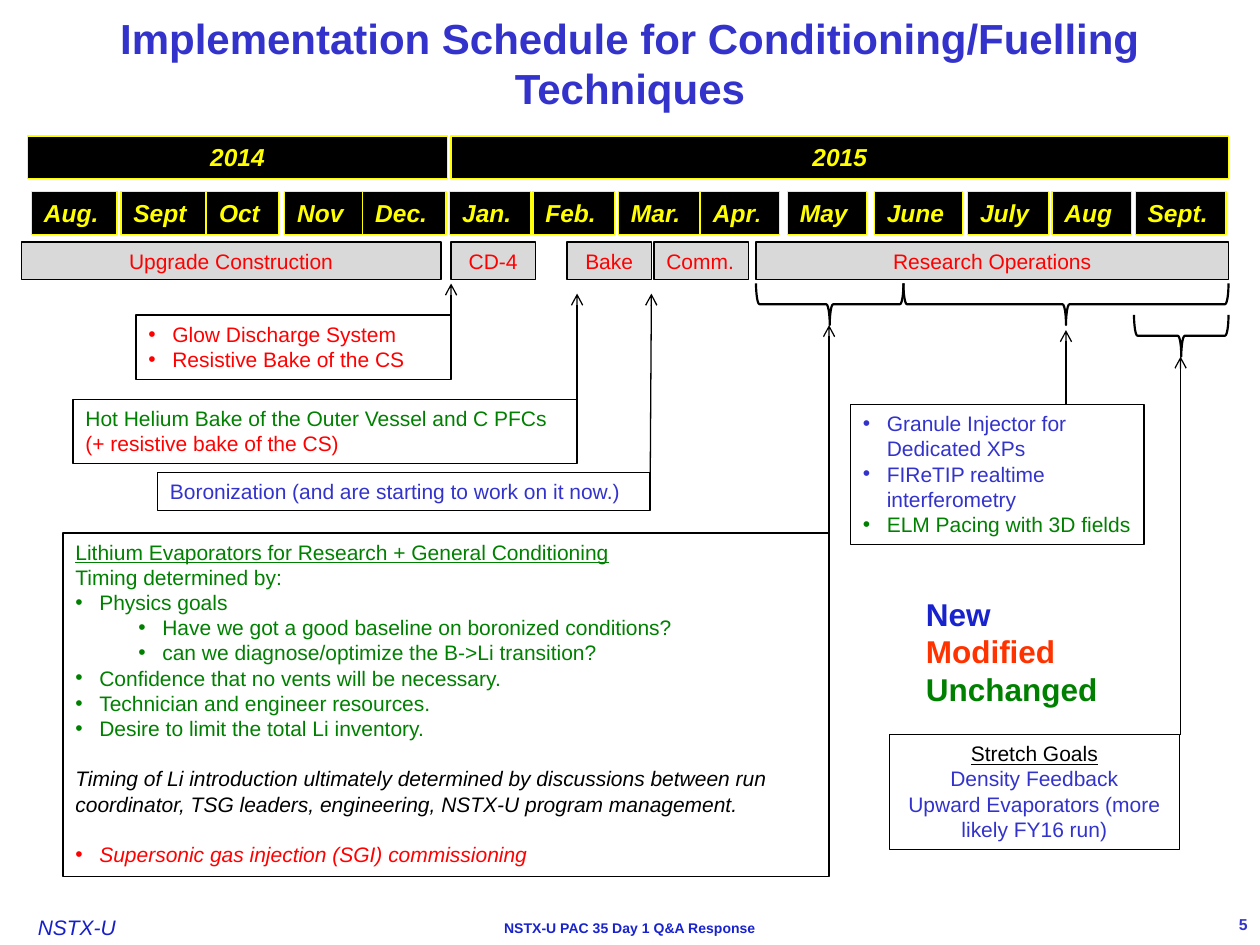
from dataclasses import dataclass, field
from typing import Optional

from lxml.etree import SubElement
from pptx import Presentation
from pptx.dml.color import RGBColor
from pptx.enum.shapes import MSO_CONNECTOR as CONN, MSO_SHAPE as SHAPE
from pptx.enum.text import MSO_ANCHOR as ANCHOR, MSO_AUTO_SIZE as AUTO, PP_ALIGN as ALIGN
from pptx.oxml.ns import qn
from pptx.util import Inches, Pt

BLACK = RGBColor(0x00, 0x00, 0x00)
YELLOW = RGBColor(0xFF, 0xFF, 0x00)
GRAY = RGBColor(0xD9, 0xD9, 0xD9)
RED = RGBColor(0xFF, 0x00, 0x00)
ORANGE = RGBColor(0xFF, 0x33, 0x00)
GREEN = RGBColor(0x00, 0x80, 0x00)
INDIGO = RGBColor(0x33, 0x33, 0xCC)
BLUE = RGBColor(0x18, 0x22, 0xCD)
NAVY = RGBColor(0x17, 0x1F, 0xC7)

BODY = {"size": Pt(12)}
DATE = {"size": Pt(14), "bold": True, "italic": True}
LEGEND = {"size": Pt(18), "bold": True}
UNDER = {"underline": True}
ITALIC = {"italic": True}
BULLET_INDENTS = (0.19, 0.69)


@dataclass
class Run:
    text: str
    color: RGBColor
    fmt: dict = field(default_factory=dict)


@dataclass
class Para:
    runs: list[Run]
    level: Optional[int] = None
    align: ALIGN = ALIGN.LEFT
    gap: float = 0


@dataclass
class Box:
    x: float
    y: float
    w: float
    h: float
    paras: list[Para]
    fill: Optional[RGBColor] = None
    line: Optional[RGBColor] = BLACK
    base: dict = field(default_factory=lambda: BODY)
    wrap: bool = True
    anchor: ANCHOR = ANCHOR.TOP
    grow: bool = True
    margins: Optional[float] = None


@dataclass
class Arrow:
    x: float
    y: float
    end_x: float
    end_y: float
    source: Optional[str] = None


def text(value: str, color: RGBColor, align: ALIGN = ALIGN.LEFT, **fmt) -> Para:
    return Para([Run(value, color, fmt)], align=align)


def bullet(value: str, color: RGBColor, level: int = 0, gap: float = 0, **fmt) -> Para:
    return Para([Run(value, color, fmt)], level=level, gap=gap)


def fill_paragraph(p, para: Para, base: dict) -> None:
    p.alignment = para.align
    if para.gap:
        p.space_before = Pt(para.gap)
    if para.level is not None:
        p.level = para.level
        pPr = p._p.get_or_add_pPr()
        pPr.set("marL", str(Inches(BULLET_INDENTS[para.level])))
        pPr.set("indent", str(-Inches(BULLET_INDENTS[0])))
        SubElement(pPr, qn("a:buFont"), typeface="Arial")
        SubElement(pPr, qn("a:buChar"), char="•")
    for run in para.runs:
        r = p.add_run()
        r.text = run.text
        r.font.color.rgb = run.color
        for name, value in {"name": "Arial", **base, **run.fmt}.items():
            setattr(r.font, name, value)


def draw_box(s, box: Box):
    frame = [Inches(v) for v in (box.x, box.y, box.w, box.h)]
    if box.line is None:
        sp = s.shapes.add_textbox(*frame)
    else:
        sp = s.shapes.add_shape(SHAPE.RECTANGLE, *frame)
        sp.shadow.inherit = False
        sp.line.color.rgb = box.line
        sp.line.width = Pt(0.75)
        if box.fill is None:
            sp.fill.background()
        else:
            sp.fill.solid()
            sp.fill.fore_color.rgb = box.fill
    tf = sp.text_frame
    tf.word_wrap = box.wrap
    tf.vertical_anchor = box.anchor
    tf.auto_size = AUTO.SHAPE_TO_FIT_TEXT if box.grow else AUTO.NONE
    if box.margins is not None:
        for side in ("left", "top", "right", "bottom"):
            setattr(tf, f"margin_{side}", Inches(box.margins))
    for i, para in enumerate(box.paras):
        fill_paragraph(tf.add_paragraph() if i else tf.paragraphs[0], para, box.base)
    return sp


def draw_brace(s, left: float, top: float, span: float, depth: float = 0.33) -> None:
    x, y = left + (span - depth) / 2, top - (span - depth) / 2
    sp = s.shapes.add_shape(SHAPE.RIGHT_BRACE, Inches(x), Inches(y), Inches(depth), Inches(span))
    sp.rotation = 90
    sp.shadow.inherit = False
    sp.fill.background()
    sp.line.color.rgb = BLACK
    sp.line.width = Pt(1.25)


def draw_arrow(s, arrow: Arrow, boxes: dict) -> None:
    ends = [Inches(v) for v in (arrow.x, arrow.y, arrow.end_x, arrow.end_y)]
    c = s.shapes.add_connector(CONN.STRAIGHT, *ends)
    if arrow.source:
        c.begin_connect(boxes[arrow.source], 3)
    c.line.color.rgb = BLACK
    c.line.width = Pt(0.75)
    SubElement(c.line._get_or_add_ln(), qn("a:tailEnd"), type="arrow")
    SubElement(c._element.spPr, qn("a:effectLst"))


MONTHS = [("Aug.", 0.25, 0.68), ("Sept", 0.96, 0.67), ("Oct", 1.64, 0.57), ("Nov", 2.26, 0.62),
          ("Dec.", 2.88, 0.66), ("Jan.", 3.57, 0.64), ("Feb.", 4.23, 0.65), ("Mar.", 4.91, 0.64),
          ("Apr", 5.56, 0.63), ("May", 6.25, 0.63), ("June", 6.94, 0.7), ("July", 7.68, 0.64),
          ("Aug", 8.35, 0.63), ("Sept.", 9.01, 0.72)]
YEARS = [("2014", 0.22, 3.33), ("2015", 3.58, 6.17)]
PHASES = [("Upgrade Construction", 0.17, 3.33, ALIGN.CENTER), ("CD-4", 3.58, 0.67, ALIGN.CENTER),
          ("Bake", 4.5, 0.67, ALIGN.CENTER), ("Comm.", 5.19, 0.75, ALIGN.LEFT),
          ("Research Operations", 6, 3.75, ALIGN.CENTER)]
NOTES = {
    "glow": Box(1.08, 2.5, 2.5, 0.51, [
        bullet("Glow Discharge System", RED), bullet("Resistive Bake of the CS", RED)]),
    "helium": Box(0.58, 3.17, 4, 0.51, [Para([
        Run("Hot Helium Bake of the Outer Vessel and C PFCs ", GREEN),
        Run("(+ resistive bake of the CS)", RED)])]),
    "boron": Box(1.25, 3.75, 3.91, 0.3, [
        text("Boronization (and are starting to work on it now.)", INDIGO)]),
    "lithium": Box(0.5, 4.23, 6.08, 2.73, [
        text("Lithium Evaporators for Research + General Conditioning", GREEN, **UNDER),
        text("Timing determined by:", GREEN),
        bullet("Physics goals", GREEN),
        bullet("Have we got a good baseline on boronized conditions?", GREEN, 1),
        bullet("can we diagnose/optimize the B->Li transition?", GREEN, 1),
        bullet("Confidence that no vents will be necessary.", GREEN),
        bullet("Technician and engineer resources.", GREEN),
        bullet("Desire to limit the total Li inventory.", GREEN),
        Para([Run("Timing of Li introduction ultimately determined by discussions between run "
                  "coordinator, TSG leaders, engineering, NSTX-U program management.",
                  BLACK, ITALIC)], gap=14.4),
        bullet("Supersonic gas injection (SGI) commissioning", RED, gap=14.4, **ITALIC)]),
    "granule": Box(6.75, 3.21, 2.33, 1.11, [
        bullet("Granule Injector for Dedicated XPs", INDIGO),
        bullet("FIReTIP realtime interferometry", INDIGO),
        bullet("ELM Pacing with 3D fields", GREEN)]),
    "stretch": Box(7.06, 5.83, 2.3, 0.91, [
        text("Stretch Goals", BLACK, ALIGN.CENTER, **UNDER),
        text("Density Feedback", INDIGO, ALIGN.CENTER),
        text("Upward Evaporators (more likely FY16 run)", INDIGO, ALIGN.CENTER)]),
    "legend": Box(7.25, 4.67, 1.58, 1.01, [
        text("New", BLUE), text("Modified", ORANGE), text("Unchanged", GREEN)],
        line=None, base=LEGEND, wrap=False),
}
FRAME = [
    Box(0, 0, 10, 1, [text("Implementation Schedule for Conditioning/Fuelling Techniques", INDIGO,
                           ALIGN.CENTER, size=Pt(24), bold=True)],
        line=None, anchor=ANCHOR.MIDDLE, grow=False),
    Box(0.3, 7.26, 0.87, 0.2, [text("NSTX-U", NAVY, **ITALIC)], line=None, margins=0),
    Box(2, 7.25, 6, 0.24, [text("NSTX-U PAC 35 Day 1 Q&A Response", BLUE, ALIGN.CENTER,
                                size=Pt(8), bold=True)], line=None),
    Box(9.17, 7.25, 0.83, 0.17, [text("5", INDIGO, ALIGN.RIGHT, size=Pt(9), bold=True)],
        line=None, anchor=ANCHOR.MIDDLE, grow=False),
]
BRACES = [(6, 2.25, 1.17), (7.17, 2.25, 2.58), (9, 2.5, 0.75)]
ARROWS = [Arrow(3.58, 2.67, 3.58, 2.25), Arrow(4.58, 3.5, 4.58, 2.33),
          Arrow(5.16, 3.9, 5.17, 2.33, "boron"), Arrow(6.58, 4.58, 6.58, 2.58),
          Arrow(8.46, 3.21, 8.46, 2.62), Arrow(9.37, 5.83, 9.37, 2.83)]


def main() -> None:
    prs = Presentation()
    prs.slide_width, prs.slide_height = Inches(10), Inches(7.5)
    s = prs.slides.add_slide(prs.slide_layouts[6])
    for box in FRAME:
        draw_box(s, box)
    for month, x, w in MONTHS:
        para = text(month, YELLOW)
        if month == "Apr":
            para.runs.append(Run(".", YELLOW, {"size": Pt(12)}))
        draw_box(s, Box(x, 1.52, w, 0.34, [para], BLACK, YELLOW, DATE, wrap=False))
    for year, x, w in YEARS:
        draw_box(s, Box(x, 1.08, w, 0.34, [text(year, YELLOW, ALIGN.CENTER)], BLACK, YELLOW, DATE))
    for phase, x, w, align in PHASES:
        draw_box(s, Box(x, 1.92, w, 0.3, [text(phase, RED, align)], GRAY))
    boxes = {name: draw_box(s, box) for name, box in NOTES.items()}
    for brace in BRACES:
        draw_brace(s, *brace)
    for arrow in ARROWS:
        draw_arrow(s, arrow, boxes)
    prs.save("out.pptx")


if __name__ == "__main__":
    main()
